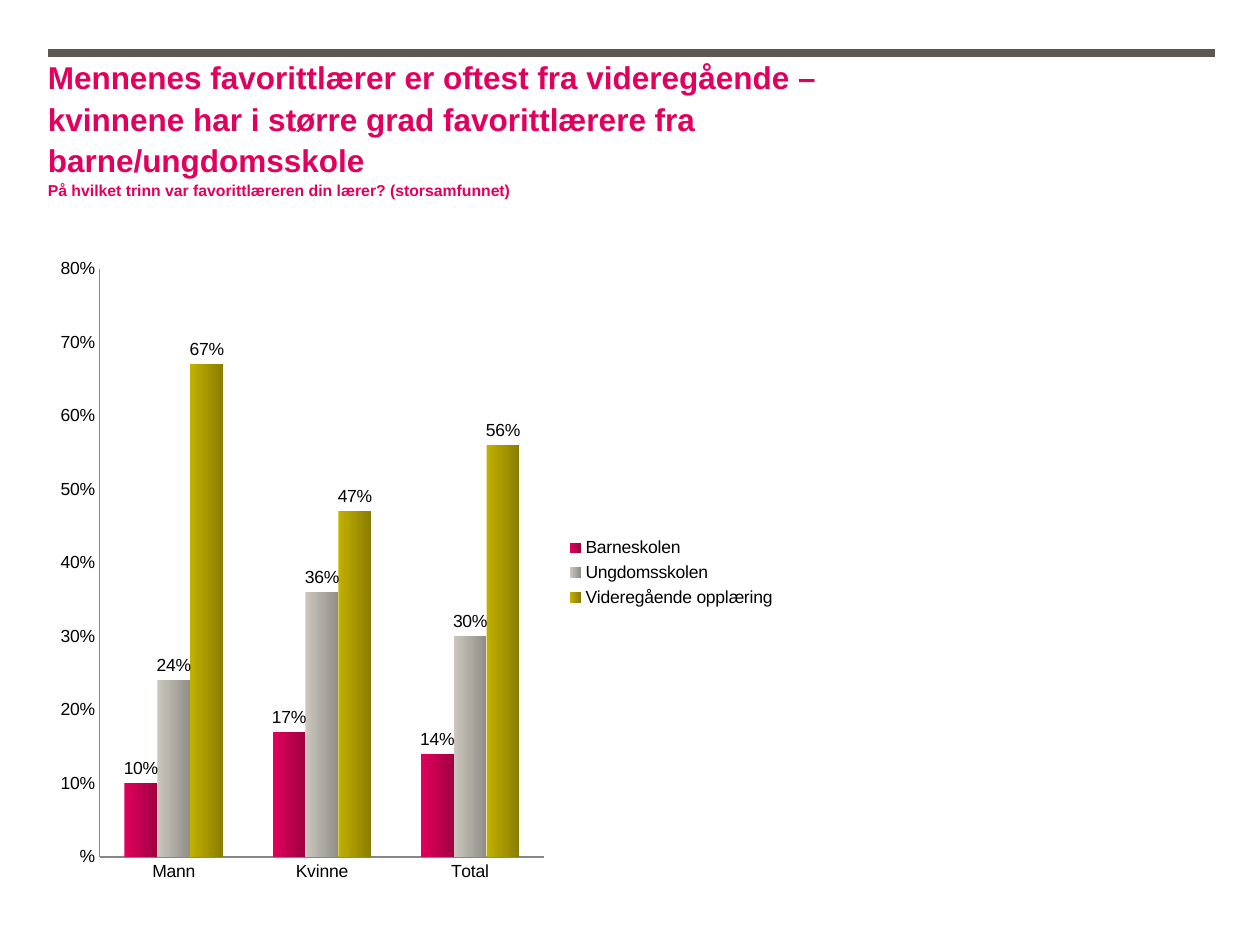
from lxml import etree
from pptx import Presentation
from pptx.chart.data import CategoryChartData
from pptx.dml.color import RGBColor
from pptx.enum.chart import XL_CHART_TYPE, XL_LABEL_POSITION, XL_LEGEND_POSITION, XL_TICK_MARK
from pptx.enum.shapes import MSO_CONNECTOR
from pptx.enum.text import MSO_ANCHOR
from pptx.oxml.ns import qn
from pptx.util import Inches, Pt

COLUMNS = XL_CHART_TYPE.COLUMN_CLUSTERED
OUTSIDE = XL_LABEL_POSITION.OUTSIDE_END
RIGHT = XL_LEGEND_POSITION.RIGHT
NO_TICK = XL_TICK_MARK.NONE
STRAIGHT = MSO_CONNECTOR.STRAIGHT
TOP = MSO_ANCHOR.TOP

COLORS = {
    "rule": "5F574F", "title": "E1005D", "text": "000000", "axis": "868686",
    "pink": "E1005D", "pink_dark": "A00042",
    "grey": "CBC7BF", "grey_dark": "918E88",
    "olive": "C2B000", "olive_dark": "8A7D00",
}
PERCENT = r"###\%"
CATEGORIES = ["Mann", "Kvinne", "Total"]
SERIES = [
    ("Barneskolen", [10, 17, 14], "pink"),
    ("Ungdomsskolen", [24, 36, 30], "grey"),
    ("Videregående opplæring", [67, 47, 56], "olive"),
]


def rgb(name):
    return RGBColor.from_string(COLORS[name])


class SlideBuilder:
    font = "Arial"

    def __init__(self, slide):
        self.slide = slide

    def style(self, font, size, color, bold=False):
        font.name, font.size, font.bold = self.font, Pt(size), bold
        font.color.rgb = rgb(color)

    def rule(self, x1, x2, y, color, width):
        line = self.slide.shapes.add_connector(
            STRAIGHT, Inches(x1), Inches(y), Inches(x2), Inches(y))
        line.line.color.rgb = rgb(color)
        line.line.width = Pt(width)
        etree.SubElement(line._element.spPr, qn("a:effectLst"))

    def title(self, x, y, w, h, heading, question):
        box = self.slide.shapes.add_textbox(Inches(x), Inches(y), Inches(w), Inches(h))
        tf = box.text_frame
        tf.word_wrap = True
        tf.vertical_anchor = TOP
        tf.margin_left = tf.margin_right = tf.margin_top = tf.margin_bottom = 0
        p = tf.paragraphs[0]
        p.line_spacing = 1.1
        self.style(p.font, 18, "title", bold=True)
        p.add_run().text = heading
        p.add_line_break()
        r = p.add_run()
        r.text = question
        r.font.size = Pt(9)

    def column_chart(self, x, y, w, h, categories, series, plot_area):
        data = CategoryChartData(number_format=PERCENT)
        data.categories = categories
        for name, values, _ in series:
            data.add_series(name, values)
        chart = self.slide.shapes.add_chart(
            COLUMNS, Inches(x), Inches(y), Inches(w), Inches(h), data).chart
        self.style(chart.font, 10, "text")
        chart.has_title = False
        chart.has_legend = True
        chart.legend.position = RIGHT
        chart.legend.include_in_layout = False

        # Axes
        for axis in (chart.category_axis, chart.value_axis):
            axis.major_tick_mark = axis.minor_tick_mark = NO_TICK
            axis.has_major_gridlines = False
            axis.format.line.color.rgb = rgb("axis")
            axis.format.line.width = Pt(0.75)
        values_axis = chart.value_axis
        values_axis.minimum_scale, values_axis.maximum_scale = 0, 80
        values_axis.major_unit = 10
        values_axis.tick_labels.number_format = PERCENT
        values_axis.tick_labels.number_format_is_linked = False

        # Columns and their labels
        plot = chart.plots[0]
        plot.gap_width, plot.overlap = 150, 0
        plot.vary_by_categories = False
        for s, (_, _, color) in zip(plot.series, series):
            fill = s.format.fill
            fill.gradient()
            fill.gradient_angle = 0
            for stop, shade in zip(fill.gradient_stops, (color, color + "_dark")):
                stop.color.rgb = rgb(shade)
            labels = s.data_labels
            labels.show_value = True
            labels.position = OUTSIDE
            labels.number_format = PERCENT
            labels.number_format_is_linked = False
        self.place_plot(chart, plot_area)

    def place_plot(self, chart, plot_area):
        area = chart._chartSpace.find(".//" + qn("c:plotArea"))
        for old in area.findall(qn("c:layout")):
            area.remove(old)
        layout = etree.Element(qn("c:layout"))
        manual = etree.SubElement(layout, qn("c:manualLayout"))
        settings = [("layoutTarget", "inner"), ("xMode", "edge"), ("yMode", "edge")]
        for tag, value in settings + list(zip("xywh", plot_area)):
            etree.SubElement(manual, qn("c:" + tag)).set("val", str(value))
        area.insert(0, layout)


def main():
    prs = Presentation()
    prs.slide_width, prs.slide_height = Inches(10), Inches(7.5)
    builder = SlideBuilder(prs.slides.add_slide(prs.slide_layouts[6]))

    # Header
    builder.rule(0.38, 9.64, 0.42, "rule", 4.5)
    builder.title(
        0.38, 0.43, 6.82, 1.11,
        "Mennenes favorittlærer er oftest fra videregående – "
        "kvinnene har i større grad favorittlærere fra barne/ungdomsskole",
        "På hvilket trinn var favorittlæreren din lærer? (storsamfunnet)")

    # Favourite teacher by school level
    builder.column_chart(0.38, 1.98, 5.88, 5.13, CATEGORIES, SERIES,
                         plot_area=(0.07, 0.03, 0.6, 0.91))
    prs.save("out.pptx")


if __name__ == "__main__":
    main()
